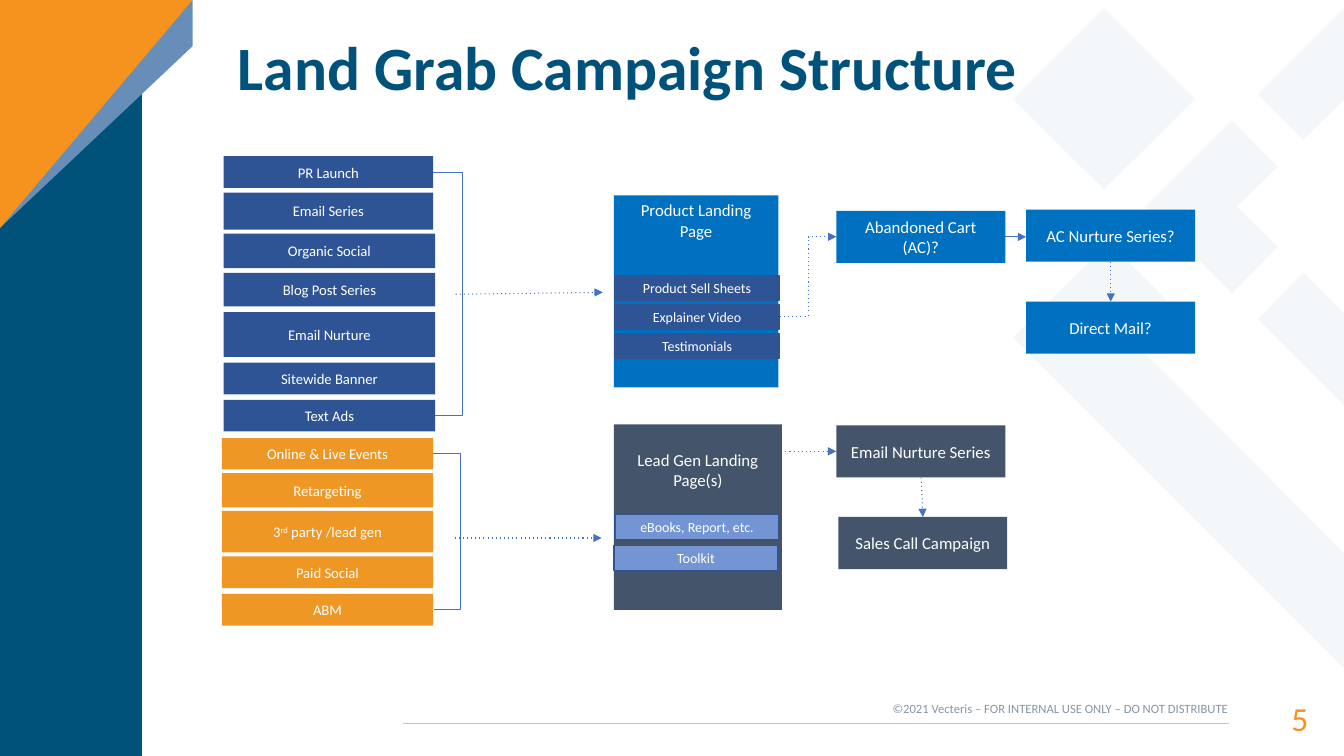
from lxml.etree import SubElement
from pptx import Presentation
from pptx.dml.color import RGBColor
from pptx.enum.shapes import MSO_CONNECTOR as CONN, MSO_SHAPE as SHAPE
from pptx.enum.text import MSO_ANCHOR as ANCHOR, PP_ALIGN as ALIGN
from pptx.oxml.ns import qn
from pptx.util import Pt

NAVY = RGBColor(0x00, 0x52, 0x7B)
STEEL = RGBColor(0x66, 0x8E, 0xB8)
ORANGE = RGBColor(0xF6, 0x92, 0x1E)
PALE = RGBColor(0xE9, 0xEE, 0xF4)
RULE = RGBColor(0xB3, 0xC6, 0xDC)
GREY = RGBColor(0x87, 0x96, 0xA4)
WHITE = RGBColor(0xFF, 0xFF, 0xFF)
BLUE = RGBColor(0x00, 0x70, 0xC0)
SLATE = RGBColor(0x44, 0x54, 0x6A)
INDIGO = RGBColor(0x2F, 0x54, 0x96)
AMBER = RGBColor(0xEE, 0x97, 0x25)
SKY = RGBColor(0x73, 0x95, 0xD3)
EDGE = RGBColor(0x31, 0x53, 0x8F)
ARROW = RGBColor(0x44, 0x72, 0xC4)

# ---- Content (all lengths in points) ----
TITLE = "Land Grab Campaign Structure"
FOOTER = "©2021 Vecteris – FOR INTERNAL USE ONLY – DO NOT DISTRIBUTE"
PAGE = "5"

# Channels: text, top, height, width; ^ marks superscript
PRODUCT_CHANNELS = [
    ("PR Launch", 111.6, 22.7, 149.6),
    ("Email Series", 137.5, 26.5, 149.6),
    ("Organic Social", 167, 24.6, 151),
    ("Blog Post Series", 195, 23.8, 151),
    ("Email Nurture", 223, 32, 151),
    ("Sitewide Banner", 259, 22.8, 151),
    ("Text Ads", 285.7, 22.5, 151),
]
LEAD_CHANNELS = [
    ("Online & Live Events", 312.9, 22.5, 151),
    ("Retargeting", 338, 24.5, 151),
    ("3^rd^ party /lead gen", 365, 29.6, 151),
    ("Paid Social", 397.4, 22.8, 151),
    ("ABM", 424.2, 22.8, 151),
]
CHANNEL_GROUPS = [(PRODUCT_CHANNELS, 159.8, INDIGO), (LEAD_CHANNELS, 158.4, AMBER)]

# Landing pages: text, box, fill, top inset
PAGES = [
    ("Product Landing Page", (438.5, 139.5, 117.5, 137.2), BLUE, 3.6),
    ("Lead Gen Landing Page(s)", (438.5, 303.2, 120, 132.5), SLATE, 18.2),
]
# Assets on the pages: text, left, top, fill
ASSETS = [
    ("Product Sell Sheets", 439.2, 196.7, INDIGO),
    ("Explainer Video", 439.2, 217.4, INDIGO),
    ("Testimonials", 439.2, 238.1, INDIGO),
    ("eBooks, Report, etc.", 439.2, 367.5, SKY),
    ("Toolkit", 438.5, 389.5, SKY),
]
# Follow-up steps: text, left, top, fill
STEPS = [
    ("Abandoned Cart (AC)?", 597.4, 150.6, BLUE),
    ("AC Nurture Series?", 733, 149.8, BLUE),
    ("Direct Mail?", 733, 215.5, BLUE),
    ("Email Nurture Series", 597.4, 303.8, SLATE),
    ("Sales Call Campaign", 598.8, 369.3, SLATE),
]
# Links: start, end, format
LINKS = [
    ((325.5, 210.2), (430.6, 208.8), dict(dotted=True)),
    ((324.7, 384.3), (429.8, 384.3), dict(dotted=True)),
    ((557, 225.9), (597.4, 169.2), dict(dotted=True, spine=577.2)),
    ((717.8, 169.2), (733, 169.2), dict()),
    ((793.4, 187.2), (793.4, 215.5), dict(dotted=True)),
    ((561, 322.4), (597.4, 322.4), dict(dotted=True)),
    ((658, 341.2), (659.2, 369.3), dict(dotted=True)),
    ((309.4, 123), (310.8, 296.8), dict(spine=330.4, arrow=False)),
    ((309.4, 324), (310.2, 435.6), dict(spine=329, arrow=False)),
]

# Decoration outlines
PALE_BANDS = [
    [(880, 86), (818, 147.6), (880, 209.5), (912.5, 176.5), (883.5, 147.6), (912.5, 119)],
    [(792, 173), (723.6, 241), (960, 477.5), (960, 395), (806.5, 241), (833, 214)],
    [(931, 195), (898.5, 228), (960, 289.5), (960, 224)],
    [(960, 6), (898.5, 67.5), (931, 100), (960, 71.3)],
]
CORNER = [
    ([(0, 0), (101.5, 0), (101.5, 540), (0, 540)], NAVY),
    ([(137.5, 0), (0, 0), (0, 162.8), (137.5, 33)], STEEL),
    ([(137.5, 0), (0, 0), (0, 162.8)], ORANGE),
]

prs = Presentation()
prs.slide_width, prs.slide_height = Pt(960), Pt(540)
slide = prs.slides.add_slide(prs.slide_layouts[5])
shapes = slide.shapes


def write(sp, text, size=12, color=WHITE, bold=False, align=ALIGN.CENTER,
          anchor=ANCHOR.MIDDLE, insets=(7.2, 3.6, 7.2, 3.6), spacing=1.0):
    tf = sp.text_frame
    tf.word_wrap = True
    tf.vertical_anchor = anchor
    tf.margin_left, tf.margin_top, tf.margin_right, tf.margin_bottom = map(Pt, insets)
    p = tf.paragraphs[0]
    p.alignment, p.line_spacing = align, spacing
    for i, part in enumerate(text.split("^")):
        r = p.add_run()
        r.text = part
        r.font.name, r.font.size, r.font.bold = "Calibri", Pt(size), bold
        r.font.color.rgb = color
        if i % 2:
            r._r.get_or_add_rPr().set("baseline", "30000")


def paint(sp, fill, edge=None, alpha=None):
    sp.shadow.inherit = False
    sp.fill.solid()
    sp.fill.fore_color.rgb = fill
    if alpha:
        clr = sp._element.spPr.find(qn("a:solidFill"))[0]
        SubElement(clr, qn("a:alpha")).set("val", str(alpha * 1000))
    if edge:
        sp.line.color.rgb, sp.line.width = edge, Pt(1)
    else:
        sp.line.fill.background()


def box(text, rect, fill, edge=None, **fmt):
    sp = shapes.add_shape(SHAPE.RECTANGLE, *map(Pt, rect))
    paint(sp, fill, edge)
    write(sp, text, **fmt)


def polygon(points, fill, alpha=None):
    pts = [(Pt(x), Pt(y)) for x, y in points]
    fb = shapes.build_freeform(*pts[0])
    fb.add_line_segments(pts[1:], close=True)
    paint(fb.convert_to_shape(), fill, alpha=alpha)


def link(start, end, color=ARROW, width=0.75, dotted=False, arrow=True, spine=None):
    kind = CONN.ELBOW if spine else CONN.STRAIGHT
    c = shapes.add_connector(kind, *map(Pt, start + end))
    c.line.color.rgb, c.line.width = color, Pt(width)
    pr = c._element.spPr
    ln = pr.find(qn("a:ln"))
    if dotted:
        SubElement(ln, qn("a:prstDash")).set("val", "dot")
    if spine:
        adj = round((spine - start[0]) / (end[0] - start[0]) * 100000)
        guides = pr.find(qn("a:prstGeom")).find(qn("a:avLst"))
        gd = SubElement(guides, qn("a:gd"))
        gd.set("name", "adj1")
        gd.set("fmla", f"val {adj}")
    if arrow:
        SubElement(ln, qn("a:tailEnd")).set("type", "triangle")
    SubElement(pr, qn("a:effectLst"))


def label(text, rect, **fmt):
    write(shapes.add_textbox(*map(Pt, rect)), text, insets=(0, 0, 0, 0),
          align=ALIGN.RIGHT, **fmt)


# Background decoration
for band in PALE_BANDS:
    polygon(band, PALE, alpha=47)
diamond = shapes.add_shape(SHAPE.DIAMOND, Pt(723.6), Pt(6), Pt(130), Pt(129.5))
paint(diamond, PALE, alpha=47)
for points, fill in CORNER:
    polygon(points, fill)

# Title, in front of the decoration
title = shapes.title
title.left, title.top, title.width, title.height = map(Pt, (170, 25.2, 690, 49))
write(title, TITLE, size=44, color=NAVY, bold=True, align=ALIGN.LEFT,
      insets=(0, 0.7, 0, 0), spacing=0.9)
shapes._spTree.append(title._element)

# Footer
link((287.6, 517), (877.7, 517), color=RULE, width=0.82, arrow=False)
label(PAGE, (877, 496.8, 57.6, 27.4), size=24, color=ORANGE, spacing=1.19)
label(FOOTER, (570, 500.4, 307, 10.8), size=9, color=GREY, anchor=ANCHOR.TOP)

# Flow chart
for channels, left, fill in CHANNEL_GROUPS:
    for text, top, height, width in channels:
        box(text, (left, top, width, height), fill, size=10.5)
for text, rect, fill, inset in PAGES:
    box(text, rect, fill, anchor=ANCHOR.TOP, insets=(7.2, inset, 7.2, 3.6))
for text, left, top, fill in ASSETS:
    box(text, (left, top, 117.4, 18), fill, edge=EDGE, size=10)
for text, left, top, fill in STEPS:
    box(text, (left, top, 120.7, 37.2), fill)
for start, end, fmt in LINKS:
    link(start, end, **fmt)

prs.save("out.pptx")
